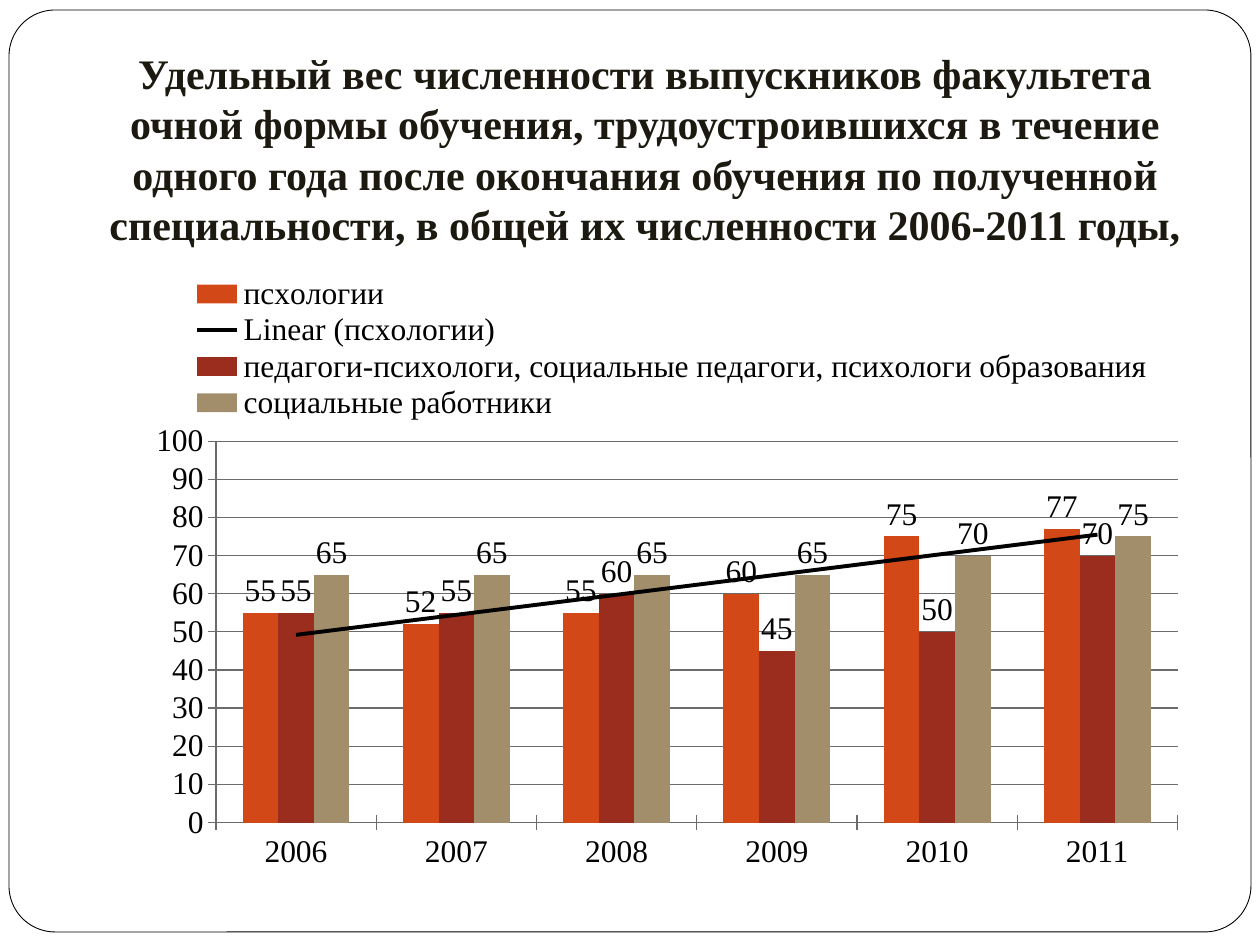
from lxml import etree
from pptx import Presentation
from pptx.chart.data import CategoryChartData
from pptx.dml.color import RGBColor
from pptx.enum.chart import XL_CHART_TYPE, XL_LABEL_POSITION, XL_LEGEND_POSITION, XL_TICK_MARK
from pptx.enum.shapes import MSO_SHAPE
from pptx.enum.text import MSO_ANCHOR, PP_ALIGN
from pptx.oxml import parse_xml
from pptx.oxml.ns import nsdecls, qn
from pptx.util import Emu, Pt

PX_PER_INCH = 126
FONT = "Times New Roman"
BLACK, WHITE, GRAY = "000000", "FFFFFF", "6B6B6B"
COLUMN = XL_CHART_TYPE.COLUMN_CLUSTERED
OUTSIDE_END = XL_LABEL_POSITION.OUTSIDE_END
LEGEND_TOP = XL_LEGEND_POSITION.TOP
TICK_CROSS, TICK_NONE = XL_TICK_MARK.CROSS, XL_TICK_MARK.NONE
ROUNDED = MSO_SHAPE.ROUNDED_RECTANGLE
BOTTOM, CENTER = MSO_ANCHOR.BOTTOM, PP_ALIGN.CENTER

TITLE = ("Удельный вес численности выпускников факультета очной формы обучения, "
         "трудоустроившихся в течение одного года после окончания обучения по "
         "полученной специальности, в общей их численности 2006-2011 годы,")
YEARS = ["2006", "2007", "2008", "2009", "2010", "2011"]
GRADUATES = [
    ("псхологии", "D34817", (55, 52, 55, 60, 75, 77)),
    ("педагоги-психологи, социальные педагоги, психологи образования", "9B2D1F",
     (55, 55, 60, 45, 50, 70)),
    ("социальные работники", "A28E6A", (65, 65, 65, 65, 70, 75)),
]


def px(length):
    return Emu(round(length * 914400 / PX_PER_INCH))


def color(hex_value):
    return RGBColor.from_string(hex_value)


def format_line(line, hex_value, width):
    line.color.rgb = color(hex_value)
    line.width = Pt(width)


def add_frame(slide, box):
    frame = slide.shapes.add_shape(ROUNDED, *map(px, box))
    frame.adjustments[0] = 0.05
    frame.shadow.inherit = False
    frame.fill.solid()
    frame.fill.fore_color.rgb = color(WHITE)
    format_line(frame.line, BLACK, 0.5)


def add_text(slide, box, text, size=24, text_color=BLACK, bold=False, align=CENTER, anchor=BOTTOM):
    text_frame = slide.shapes.add_textbox(*map(px, box)).text_frame
    text_frame.word_wrap = True
    text_frame.vertical_anchor = anchor
    text_frame.margin_bottom = px(13)
    paragraph = text_frame.paragraphs[0]
    paragraph.text = text
    paragraph.alignment = align
    font = paragraph.runs[0].font
    font.name, font.size, font.bold = FONT, Pt(size), bold
    font.color.rgb = color(text_color)


def set_layout(parent, position, box, target=None):
    """Place a chart part by fractions of the chart's width and height."""
    for old_layout in parent.findall(qn("c:layout")):
        parent.remove(old_layout)
    layout = etree.Element(qn("c:layout"))
    manual = etree.SubElement(layout, qn("c:manualLayout"))
    settings = [("layoutTarget", target)] if target else []
    settings += [("xMode", "edge"), ("yMode", "edge"), *zip("xywh", map(str, box))]
    for name, value in settings:
        etree.SubElement(manual, qn(f"c:{name}"), val=value)
    parent.insert(position, layout)


def add_trend_line(series):
    trend_line = parse_xml(
        f'<c:trendline {nsdecls("c", "a")}><c:spPr><a:ln w="{Pt(2.25)}"><a:solidFill>'
        f'<a:srgbClr val="{BLACK}"/></a:solidFill></a:ln></c:spPr>'
        '<c:trendlineType val="linear"/><c:dispRSqr val="0"/><c:dispEq val="0"/></c:trendline>')
    series._element.find(qn("c:cat")).addprevious(trend_line)


def format_axes(chart):
    values = chart.value_axis
    values.minimum_scale, values.maximum_scale, values.major_unit = 0, 100, 10
    format_line(values.major_gridlines.format.line, GRAY, 0.75)
    for axis in (values, chart.category_axis):
        axis.major_tick_mark, axis.minor_tick_mark = TICK_CROSS, TICK_NONE
        format_line(axis.format.line, GRAY, 0.75)


def add_graduates_chart(slide, box):
    data = CategoryChartData(number_format="General")
    data.categories = YEARS
    for name, _, values in GRADUATES:
        data.add_series(name, values)
    chart = slide.shapes.add_chart(COLUMN, *map(px, box), data).chart
    chart.has_title = False
    chart.font.name, chart.font.size = FONT, Pt(18)
    chart.font.color.rgb = color(BLACK)
    format_axes(chart)

    plot = chart.plots[0]
    plot.gap_width, plot.overlap, plot.vary_by_categories = 150, 0, False
    for series, (_, fill, _) in zip(plot.series, GRADUATES):
        series.format.fill.solid()
        series.format.fill.fore_color.rgb = color(fill)
        series.data_labels.show_value = True
        series.data_labels.position = OUTSIDE_END
    add_trend_line(plot.series[0])

    chart.has_legend = True
    chart.legend.position = LEGEND_TOP
    chart.legend.include_in_layout = False
    set_layout(chart.legend._element, 1, (0.06, 0.02, 0.9, 0.23))
    plot_area = chart._chartSpace.chart.plotArea
    set_layout(plot_area, 0, (0.084, 0.28, 0.898, 0.596), target="inner")


def main():
    presentation = Presentation()
    presentation.slide_width, presentation.slide_height = px(1260), px(945)
    slide = presentation.slides.add_slide(presentation.slide_layouts[6])
    add_frame(slide, (9, 10, 1242, 922))
    add_text(slide, (73, 38, 1144, 224), TITLE, text_color="1C1911", bold=True)
    add_graduates_chart(slide, (126, 262, 1071, 640))
    presentation.save("out.pptx")


if __name__ == "__main__":
    main()
